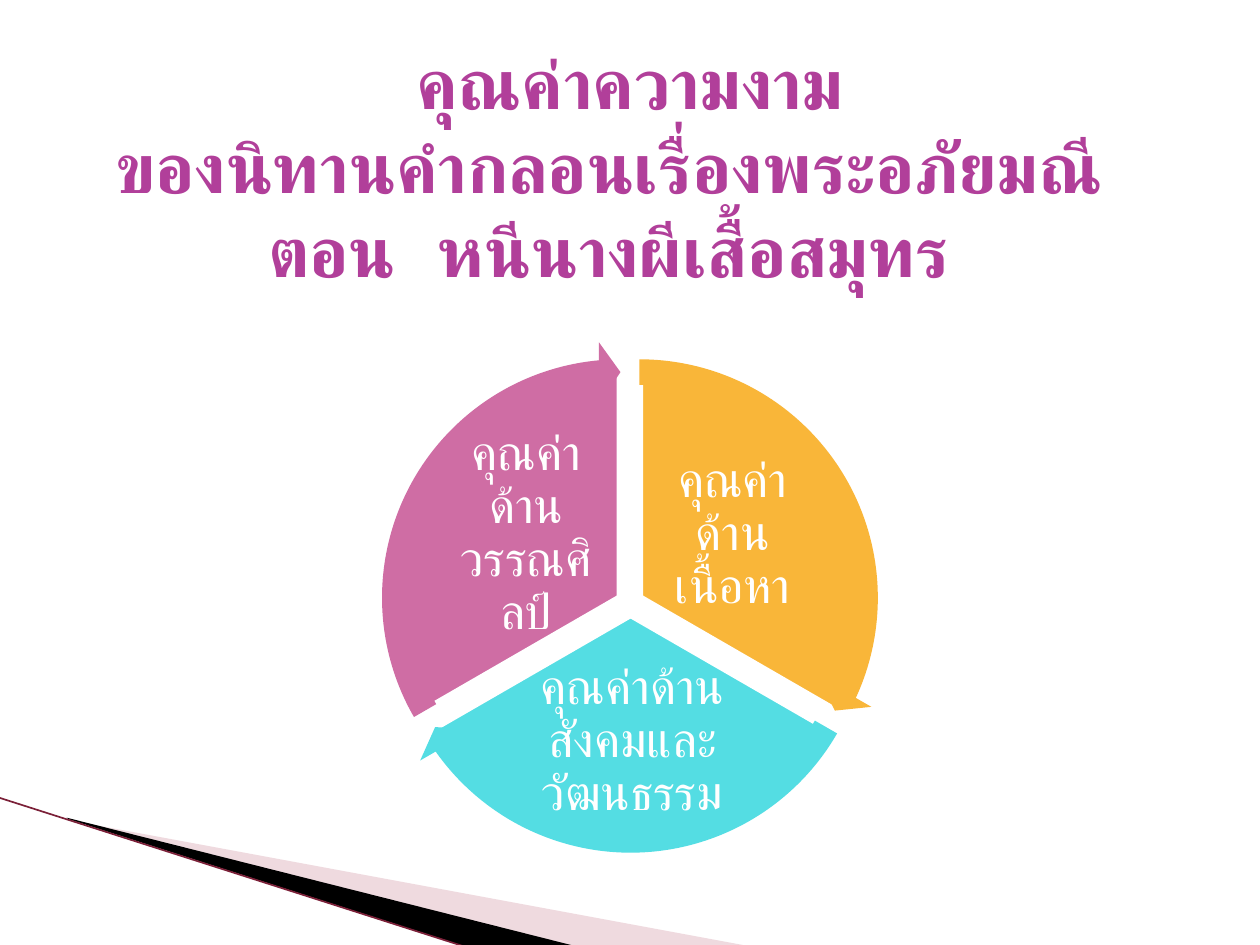
from lxml import etree
from pptx import Presentation
from pptx.dml.color import RGBColor
from pptx.enum.shapes import MSO_CONNECTOR as Connector, MSO_SHAPE as Shape
from pptx.enum.text import MSO_ANCHOR as Anchor, PP_ALIGN as Align
from pptx.oxml.ns import qn
from pptx.util import Inches, Pt

FONT = "Courier New"
SECTORS = [
    ("คุณค่าด้านเนื้อหา", "F9B639", 162, 18, (0.15, 0), (2.06, 0.77, 1.29, 1.08)),
    ("คุณค่าด้านสังคมและวัฒนธรรม", "54DDE3", 18, 90, (0.08, 0.13), (0.94, 2.48, 1.94, 0.95)),
    ("คุณค่าด้านวรรณศิลป์", "CF6DA4", 90, 162, (0, 0), (0.42, 0.77, 1.29, 1.08)),
]


def color(value):
    """Turn a hex string into a colour."""
    return RGBColor.from_string(value)


def add_text(slide, text, box, size, fill, inset, bold=False, spacing=1.0):
    """Add centred text in a box of inches."""
    shape = slide.shapes.add_textbox(*map(Inches, box))
    frame = shape.text_frame
    frame.word_wrap = True
    frame.vertical_anchor = Anchor.MIDDLE
    frame.margin_left = frame.margin_right = Inches(inset[0])
    frame.margin_top = frame.margin_bottom = Inches(inset[1])
    paragraph = frame.paragraphs[0]
    paragraph.text = text
    paragraph.alignment = Align.CENTER
    paragraph.line_spacing = spacing
    font = paragraph.font
    font.size, font.bold, font.name = Pt(size), bold, FONT
    font.color.rgb = color(fill)
    properties = paragraph._p.find(".//" + qn("a:defRPr"))
    etree.SubElement(properties, qn("a:cs"), typeface=FONT)


def add_preset(slide, kind, box, fill, adjustments):
    """Add a filled preset shape without an outline."""
    shape = slide.shapes.add_shape(kind, *map(Inches, box))
    shape.shadow.inherit = False
    shape.fill.solid()
    shape.fill.fore_color.rgb = color(fill)
    shape.line.fill.background()
    for index, value in enumerate(adjustments):
        shape.adjustments[index] = value
    return shape


def add_wedge(slide, points, fill, opacity=100):
    """Add a filled polygon through points in inches."""
    builder = slide.shapes.build_freeform(*map(Inches, points[0]), scale=1.0)
    builder.add_line_segments([tuple(map(Inches, point)) for point in points[1:]])
    shape = builder.convert_to_shape()
    shape.shadow.inherit = False
    shape.fill.solid()
    shape.fill.fore_color.rgb = color(fill)
    shape.line.fill.background()
    if opacity < 100:
        tone = shape._element.spPr.find(".//" + qn("a:srgbClr"))
        etree.SubElement(tone, qn("a:alpha"), val=str(opacity * 1000))


def add_corner(slide, left, top):
    """Draw the slanted corner decoration from its top left point."""
    pale = [(0.56, 0.18), (5.96, 1.18), (4.57, 1.18), (0.56, 0.17)]
    dark = [(0.54, 0.16), (4.58, 1.18), (3.73, 1.19), (0.55, 0.17)]
    for points, fill, opacity in ((pale, "D8A3AF", 40), (dark, "000000", 100)):
        add_wedge(slide, [(left + x, top + y) for x, y in points], fill, opacity)
    ends = (left, top, left + 3.72, top + 1.19)
    line = slide.shapes.add_connector(Connector.STRAIGHT, *map(Inches, ends))
    line.line.color.rgb = color("7B2038")
    line.line.width = Pt(0.95)
    etree.SubElement(line._element.spPr, qn("a:effectLst"))


def add_cycle(slide, left, top, size):
    """Draw the three sectors, their labels and the arrows around them."""
    for text, fill, start, end, (x, y), label in SECTORS:
        box = (left + x, top + y, size, size)
        sector = add_preset(slide, Shape.PIE, box, fill, (start, end))
        sector.line.color.rgb = color("FFFFFF")
        sector.line.width = Pt(4.33)
        label_box = (left + label[0], top + label[1], *label[2:])
        add_text(slide, text, label_box, 28, "FFFFFF", (0.04, 0.04), spacing=0.9)
    margin = 0.22
    for text, fill, start, end, (x, y), label in SECTORS:
        arrow_size = size + 2 * margin
        box = (left + x - margin, top + y - margin, arrow_size, arrow_size)
        add_preset(slide, Shape.CIRCULAR_ARROW, box, fill,
                   (0.05, 3.28, end - 3.28, start, 0.06))


def main():
    """Build and save the slide."""
    presentation = Presentation()
    presentation.slide_width = Inches(10)
    presentation.slide_height = Inches(7.5)
    slide = presentation.slides.add_slide(presentation.slide_layouts[6])
    add_corner(slide, -0.01, 6.33)
    add_cycle(slide, 3.11, 2.93, 3.63)
    title = ("คุณค่าความงาม\vของนิทานคำกลอนเรื่องพระอภัยมณี \v"
             "ตอน หนีนางผีเสื้อสมุทร ")
    add_text(slide, title, (0.5, 0.3, 9, 2.03), 40, "B13F9A", (0.1, 0.05), bold=True)
    presentation.save("out.pptx")


if __name__ == "__main__":
    main()
